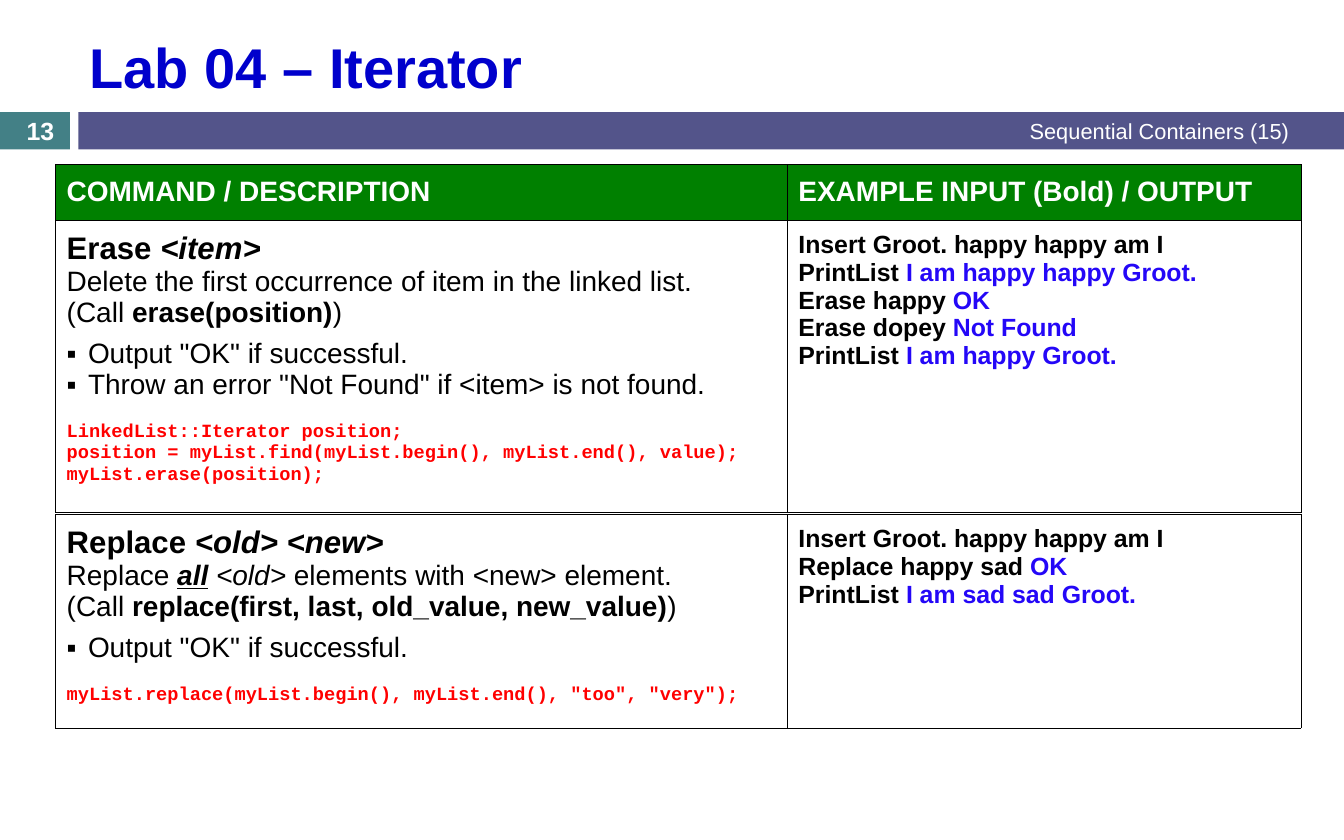
from lxml.etree import SubElement
from pptx import Presentation
from pptx.dml.color import RGBColor
from pptx.enum.shapes import MSO_SHAPE
from pptx.enum.text import MSO_ANCHOR, MSO_AUTO_SIZE, PP_ALIGN
from pptx.oxml import parse_xml
from pptx.oxml.ns import nsdecls, qn
from pptx.util import Pt

BLACK, WHITE, GREEN = "000000", "FFFFFF", "008000"
RED, OUTPUT_BLUE, TITLE_BLUE = "FF0000", "2407F7", "0000CC"
TEAL, PURPLE = "438086", "53548A"
COLUMN_WIDTHS = (470.4, 330.4)
TABLE_LEFT = 35.7

HEADINGS = ("COMMAND / DESCRIPTION", "EXAMPLE INPUT (Bold) / OUTPUT")
ERASE = {
    "command": ("Erase\u00a0", "<item>"),
    "description": [
        ("Delete the first occurrence of item in the linked list. (Call\u00a0", ""),
        ("erase(position)", "b"), (")", "")],
    "bullets": ['Output "OK" if successful.',
                'Throw an error "Not Found" if <item> is not found.'],
    "code": ["LinkedList::Iterator position;",
             "position = myList.find(myList.begin(), myList.end(), value); myList.erase(position);"],
    "examples": [("Insert Groot. happy happy am I", ""),
                 ("PrintList ", "I am happy happy Groot."),
                 ("Erase happy ", "OK"),
                 ("Erase dopey ", "Not Found"),
                 ("PrintList ", "I am happy Groot.")],
}
REPLACE = {
    "command": ("Replace\u00a0", "<old> <new>"),
    "description": [
        ("Replace\u00a0", ""), ("all", "biu"), ("\u00a0", ""), ("<old>", "i"),
        ("\u00a0elements with <new> element. (Call\u00a0", ""),
        ("replace(first, last, old_value, new_value)", "b"), (")", "")],
    "bullets": ['Output "OK" if successful.'],
    "code": ['myList.replace(myList.begin(), myList.end(), "too", "very");'],
    "examples": [("Insert Groot. happy happy am I", ""),
                 ("Replace happy sad ", "OK"),
                 ("PrintList ", "I am sad sad Groot.")],
}


def color(value):
    """Turn a hex string into a colour."""
    return RGBColor.from_string(value)


def add_run(paragraph, text, size, fill=BLACK, style="", font="Arial"):
    """Append a run; style holds any of the letters b, i and u."""
    run = paragraph.add_run()
    run.text = text
    run.font.name, run.font.size = font, Pt(size)
    run.font.color.rgb = color(fill)
    run.font.bold, run.font.italic = "b" in style, "i" in style
    run.font.underline = "u" in style


def next_paragraph(text_frame):
    """Return the first paragraph while it is empty, else a new one."""
    first = text_frame.paragraphs[0]
    return text_frame.add_paragraph() if first.runs else first


def add_bullet(paragraph):
    """Give a paragraph a square bullet with a hanging indent."""
    properties = paragraph._p.get_or_add_pPr()
    properties.set("marL", str(Pt(13.7)))
    properties.set("indent", str(-Pt(13.7)))
    SubElement(properties, qn("a:buFont")).set("typeface", "Arial")
    SubElement(properties, qn("a:buChar")).set("char", "▪")


def add_title(slide, left, top, width, height):
    """Place the slide title in its placeholder."""
    title = slide.shapes.title
    title.left, title.top, title.width, title.height = map(Pt, (left, top, width, height))
    text_frame = title.text_frame
    text_frame.auto_size = MSO_AUTO_SIZE.NONE
    text_frame.vertical_anchor = MSO_ANCHOR.MIDDLE
    paragraph = text_frame.paragraphs[0]
    paragraph.alignment = PP_ALIGN.LEFT
    add_run(paragraph, "Lab 04 – Iterator", 36, TITLE_BLUE, "b")


def add_band(slide, left, top, width, height, fill):
    """Draw one plain rectangle of the header strip."""
    band = slide.shapes.add_shape(MSO_SHAPE.RECTANGLE, *map(Pt, (left, top, width, height)))
    band.shadow.inherit = False
    band.fill.solid()
    band.fill.fore_color.rgb = color(fill)
    band.line.fill.background()


def add_label(slide, left, top, width, height, text, size, alignment, style=""):
    """Place a white label on the header strip."""
    text_frame = slide.shapes.add_textbox(*map(Pt, (left, top, width, height))).text_frame
    text_frame.word_wrap = True
    text_frame.vertical_anchor = MSO_ANCHOR.MIDDLE
    text_frame.paragraphs[0].alignment = alignment
    add_run(text_frame.paragraphs[0], text, size, WHITE, style)


def add_header_strip(slide, left, top, width, height):
    """Draw the number block and the section bar with their labels."""
    number_width, bar_offset, label_width = 45, 50.4, 512
    add_band(slide, left, top, number_width, height, TEAL)
    add_band(slide, left + bar_offset, top, width - bar_offset, height, PURPLE)
    add_label(slide, left + width - 28 - label_width, top, label_width, height,
              "Sequential Containers (15)", 14, PP_ALIGN.RIGHT)
    add_label(slide, left, top, 51.8, height, "13", 16, PP_ALIGN.CENTER, "b")


def format_cell(cell, fill):
    """Set the margins, fill and thin black borders of a cell."""
    cell.margin_left = cell.margin_right = cell.margin_top = cell.margin_bottom = Pt(7.2)
    cell.fill.solid()
    cell.fill.fore_color.rgb = color(fill)
    for index, side in enumerate("LRTB"):
        cell._tc.get_or_add_tcPr().insert(index, parse_xml(
            f'<a:ln{side} {nsdecls("a")} w="{Pt(0.3)}"><a:solidFill>'
            f'<a:srgbClr val="{BLACK}"/></a:solidFill></a:ln{side}>'))


def fill_description(text_frame, entry):
    """Write the command, its description, its bullets and its code."""
    name, arguments = entry["command"]
    paragraph = text_frame.paragraphs[0]
    paragraph.space_after = Pt(6)
    add_run(paragraph, name, 20, style="b")
    add_run(paragraph, arguments, 20, style="bi")
    paragraph.add_line_break()
    for text, style in entry["description"]:
        add_run(paragraph, text, 18, style=style)
    for text in entry["bullets"]:
        paragraph = text_frame.add_paragraph()
        add_bullet(paragraph)
        add_run(paragraph, text, 18)
    for index, text in enumerate(entry["code"]):
        paragraph = text_frame.add_paragraph()
        paragraph.space_before = Pt(0 if index else 13.8)
        add_run(paragraph, text, 12, RED, "b", "Courier New")


def fill_examples(text_frame, examples):
    """Write each input in black, followed by its output in blue."""
    for command, output in examples:
        paragraph = next_paragraph(text_frame)
        add_run(paragraph, command, 16, style="b")
        if output:
            add_run(paragraph, output, 16, OUTPUT_BLUE, "b")


def add_command_table(slide, left, top, row_heights, entry, headings=()):
    """Build a two-column command table, with a heading row if given."""
    table = slide.shapes.add_table(
        len(row_heights), 2, Pt(left), Pt(top),
        Pt(sum(COLUMN_WIDTHS)), Pt(sum(row_heights))).table
    table.first_row = table.horz_banding = False
    for column, width in zip(table.columns, COLUMN_WIDTHS):
        column.width = Pt(width)
    for row, height in zip(table.rows, row_heights):
        row.height = Pt(height)
    for cell, heading in zip(table.rows[0].cells, headings):
        format_cell(cell, GREEN)
        cell.vertical_anchor = MSO_ANCHOR.MIDDLE
        add_run(cell.text_frame.paragraphs[0], heading, 18, WHITE, "b")
    description, examples = table.rows[len(row_heights) - 1].cells
    for cell in (description, examples):
        format_cell(cell, WHITE)
    fill_description(description.text_frame, entry)
    fill_examples(examples.text_frame, entry["examples"])


def main():
    """Build and save the slide."""
    presentation = Presentation()
    presentation.slide_width, presentation.slide_height = Pt(864), Pt(540)
    slide = presentation.slides.add_slide(presentation.slide_layouts[5])
    add_header_strip(slide, 0, 72, 864, 24)
    add_title(slide, 50.4, 13.7, 785.5, 57.6)
    add_command_table(slide, TABLE_LEFT, 105.6, (34.6, 177.4), ERASE, HEADINGS)
    add_command_table(slide, TABLE_LEFT, 330.6, (129.8,), REPLACE)
    presentation.save("out.pptx")


if __name__ == "__main__":
    main()
